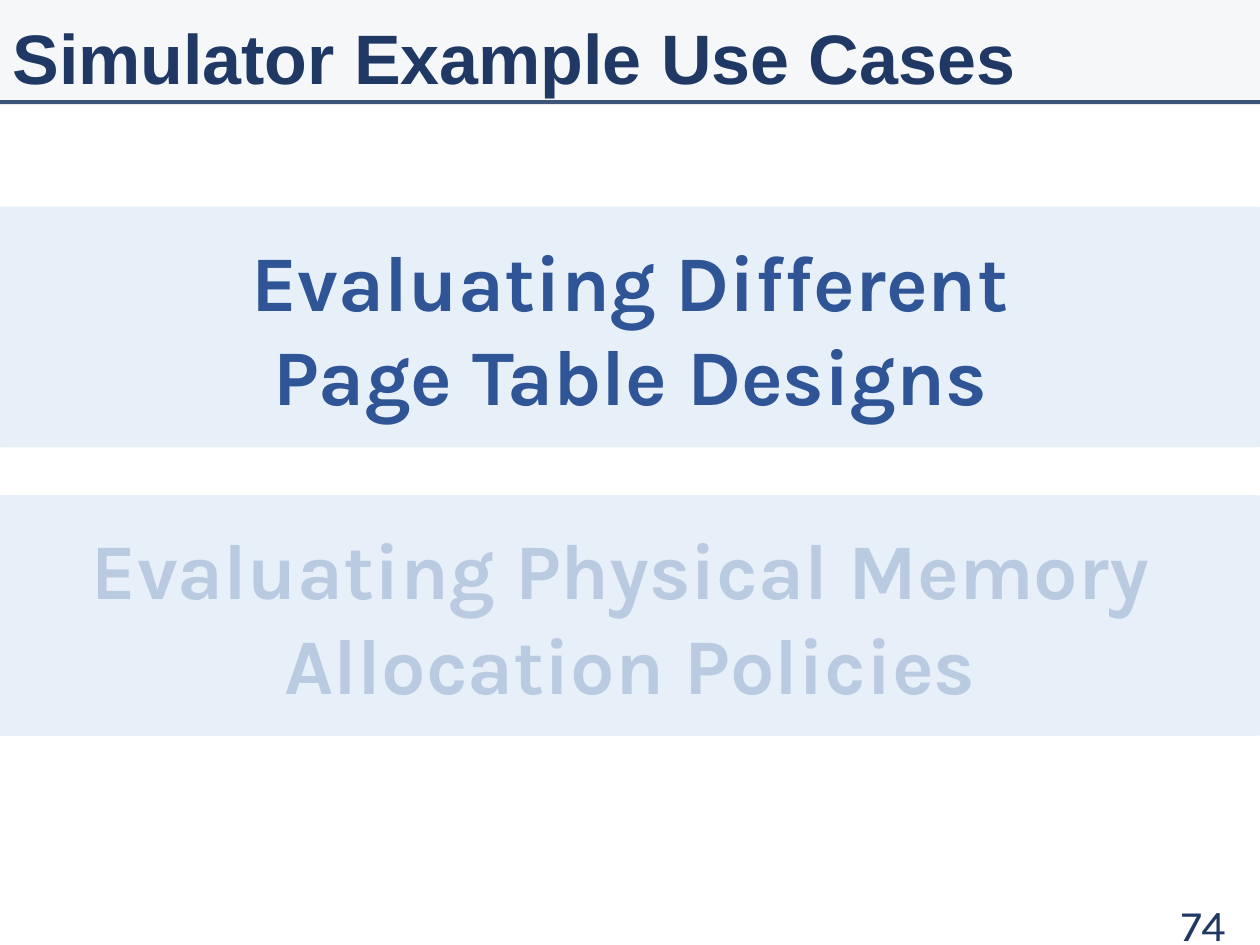
import dataclasses

import pptx
import pptx.dml.color
import pptx.enum.shapes
import pptx.enum.text
import pptx.oxml.ns
import pptx.util
from lxml import etree

ALIGN = pptx.enum.text.PP_ALIGN
SHAPE = pptx.enum.shapes.MSO_SHAPE


@dataclasses.dataclass(frozen=True)
class Theme:
    """Colours, fonts and type sizes of the slide."""
    navy: str = "203864"
    blue: str = "2F5597"
    sky: str = "9DC3E6"
    grey: str = "ADB9CA"
    faded: int = 24
    title_font: str = "Arial"
    body_font: str = "Karla"
    title_size: int = 40
    band_size: int = 45
    number_size: int = 25


THEME = Theme()
WIDTH, HEIGHT = 10, 7.5
HEADER_HEIGHT = 0.81
BAND_TOP, BAND_HEIGHT, BAND_PITCH, BAND_BLEED = 1.64, 1.91, 2.29, 0.13


def inches(*lengths):
    """Convert lengths in inches to slide units."""
    return [pptx.util.Inches(length) for length in lengths]


def paint(fill, color, opacity=100):
    """Give a fill a solid colour with an opacity in percent."""
    fill.solid()
    fill.fore_color.rgb = pptx.dml.color.RGBColor.from_string(color)
    if opacity < 100:
        clr = fill._xPr.find(".//" + pptx.oxml.ns.qn("a:srgbClr"))
        etree.SubElement(clr, pptx.oxml.ns.qn("a:alpha"), val=str(opacity * 1000))


def write(sp, text, size, font, color, align, bold=False, opacity=100, spacing=None):
    """Write vertically centred text, one paragraph per line."""
    tf = sp.text_frame
    tf.word_wrap = True
    tf.vertical_anchor = pptx.enum.text.MSO_ANCHOR.MIDDLE
    tf.text = text
    for p in tf.paragraphs:
        p.alignment = align
        p.line_spacing = spacing
        for r in p.runs:
            r.font.name = font
            r.font.size = pptx.util.Pt(size)
            r.font.bold = bold
            paint(r.font.fill, color, opacity)


def add_panel(s, kind, box, color, opacity):
    """Add a translucent shape without outline or shadow."""
    sp = s.shapes.add_shape(kind, *inches(*box))
    sp.shadow.inherit = False
    sp.line.fill.background()
    paint(sp.fill, color, opacity)
    return sp


def add_label(s, box, text, size, font, align, **style):
    """Add a navy text box."""
    sp = s.shapes.add_textbox(*inches(*box))
    write(sp, text, size, font, THEME.navy, align, **style)


def add_header(s, title):
    """Add the title bar, its rule and the title."""
    add_panel(s, SHAPE.RECTANGLE, (0, 0, WIDTH, HEADER_HEIGHT), THEME.grey, 10)
    rule = s.shapes.add_connector(
        pptx.enum.shapes.MSO_CONNECTOR.STRAIGHT,
        *inches(0, HEADER_HEIGHT, WIDTH, HEADER_HEIGHT))
    rule.line.width = pptx.util.Pt(2.25)
    paint(rule.line.fill, THEME.navy, 86)
    etree.SubElement(rule._element.spPr, pptx.oxml.ns.qn("a:effectLst"))
    add_label(s, (0, 0, 8.62, 0.98), title, THEME.title_size, THEME.title_font,
              ALIGN.LEFT, bold=True, spacing=0.9)


def add_band(s, row, text, opacity):
    """Add a full-width band with a use case in the given row."""
    box = (-BAND_BLEED, BAND_TOP + row * BAND_PITCH, WIDTH + 2 * BAND_BLEED, BAND_HEIGHT)
    sp = add_panel(s, SHAPE.ROUNDED_RECTANGLE, box, THEME.sky, THEME.faded)
    sp.adjustments[0] = 0.08
    write(sp, text, THEME.band_size, THEME.body_font, THEME.blue, ALIGN.CENTER,
          bold=True, opacity=opacity)


def main():
    """Build and save the slide."""
    prs = pptx.Presentation()
    prs.slide_width, prs.slide_height = inches(WIDTH, HEIGHT)
    s = prs.slides.add_slide(prs.slide_layouts[6])
    add_header(s, "Simulator Example Use Cases")
    add_label(s, (7.58, 7.13, 2.25, 0.4), "74", THEME.number_size, THEME.body_font,
              ALIGN.RIGHT)
    use_cases = [
        ("Evaluating Different\nPage Table Designs", 100),
        ("Evaluating Physical Memory \nAllocation Policies", THEME.faded),
    ]
    for row, (text, opacity) in enumerate(use_cases):
        add_band(s, row, text, opacity)
    prs.save("out.pptx")


if __name__ == "__main__":
    main()
